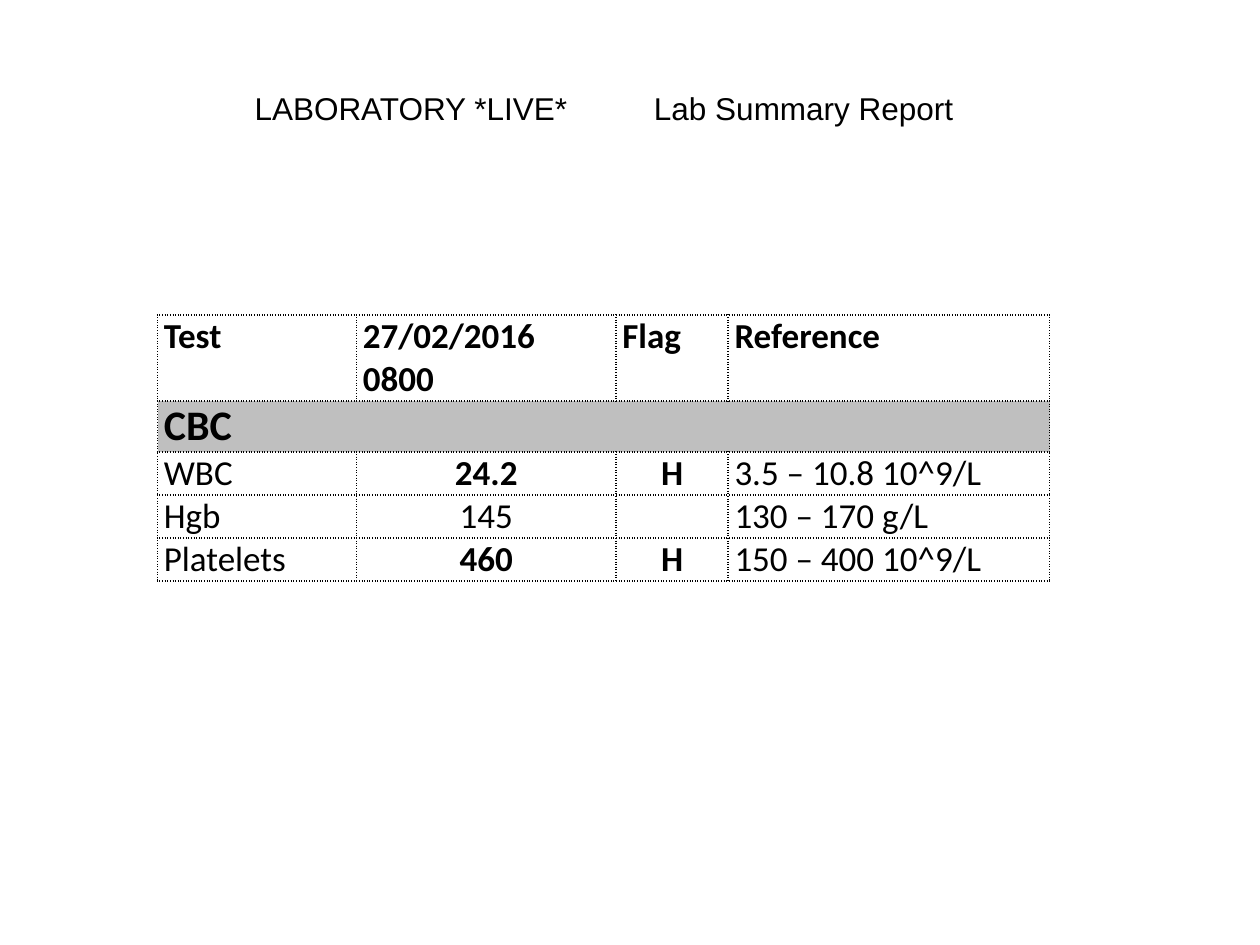
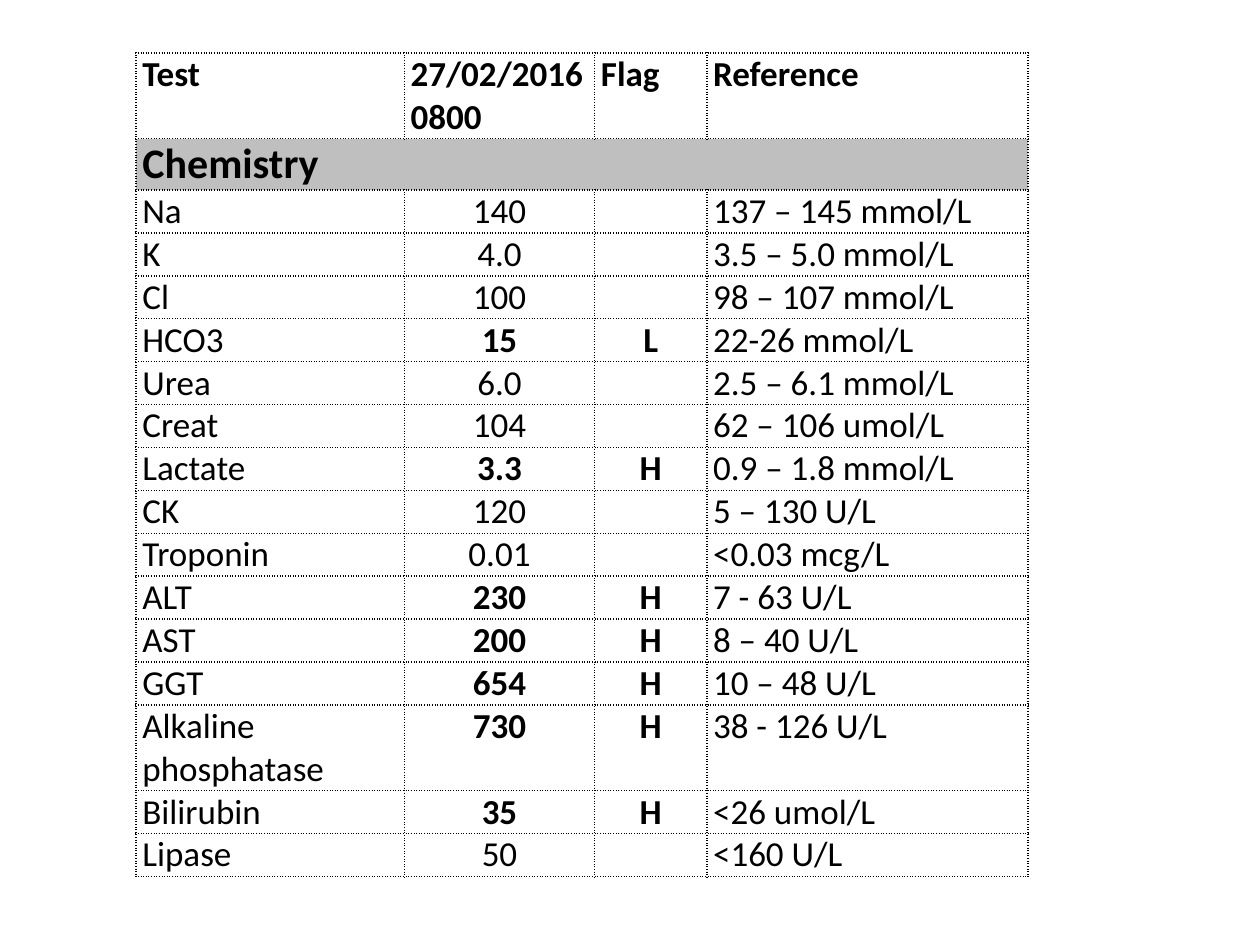
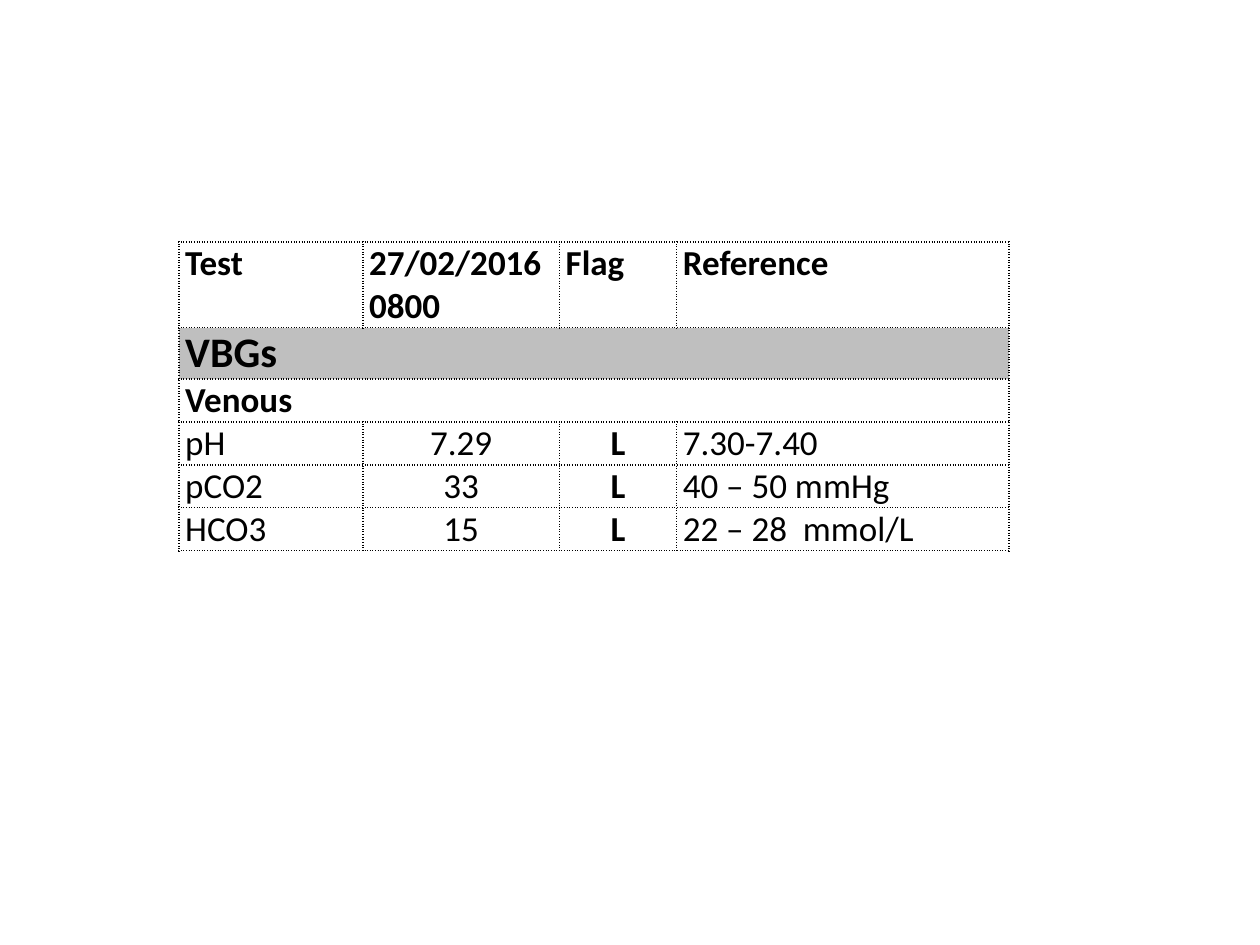
import lxml.etree
import pptx
import pptx.dml.color
import pptx.enum.text
import pptx.oxml.ns
import pptx.util

Inches = pptx.util.Inches
Pt = pptx.util.Pt
qn = pptx.oxml.ns.qn
ALIGN = pptx.enum.text.PP_ALIGN

BLACK = pptx.dml.color.RGBColor(0x00, 0x00, 0x00)
WHITE = pptx.dml.color.RGBColor(0xFF, 0xFF, 0xFF)
GREY = pptx.dml.color.RGBColor(0xBF, 0xBF, 0xBF)

TITLE_ONLY, BLANK = 5, 6
HEADER = ("Test", "27/02/2016 0800", "Flag", "Reference")
HEADER_HEIGHT, SECTION_HEIGHT, ROW_HEIGHT = 0.67, 0.4, 0.33

CBC = [
    ("WBC", "24.2", "H", "3.5 – 10.8 10^9/L"),
    ("Hgb", "145", "", "130 – 170 g/L"),
    ("Platelets", "460", "H", "150 – 400 10^9/L"),
]
CHEMISTRY = [
    ("Na", "140", "", "137 – 145 mmol/L"),
    ("K", "4.0", "", "3.5 – 5.0 mmol/L"),
    ("Cl", "100", "", "98 – 107 mmol/L"),
    ("HCO3", "15", "L", "22-26 mmol/L"),
    ("Urea", "6.0", "", "2.5 – 6.1 mmol/L"),
    ("Creat", "104", "", "62 – 106 umol/L"),
    ("Lactate", "3.3", "H", "0.9 – 1.8 mmol/L"),
    ("CK", "120", "", "5 – 130 U/L"),
    ("Troponin", "0.01", "", "<0.03 mcg/L"),
    ("ALT", "230", "H", "7 - 63 U/L"),
    ("AST", "200", "H", "8 – 40 U/L"),
    ("GGT", "654", "H", "10 – 48 U/L"),
    ("Alkaline phosphatase", "730", "H", "38 - 126 U/L"),
    ("Bilirubin", "35", "H", "<26 umol/L"),
    ("Lipase", "50", "", "<160 U/L"),
]
VENOUS_GASES = [
    ("Venous",),
    ("pH", "7.29", "L", "7.30-7.40"),
    ("pCO2", "33", "L", "40 – 50 mmHg"),
    ("HCO3", "15", "L", "22 – 28  mmol/L"),
]


def add_report_title(page, left, top, width, height):
    title = page.shapes.title
    title.left, title.top = Inches(left), Inches(top)
    title.width, title.height = Inches(width), Inches(height)
    frame = title.text_frame
    frame.text = "LABORATORY *LIVE*\tLab Summary Report"
    frame.word_wrap = True
    frame.auto_size = pptx.enum.text.MSO_AUTO_SIZE.NONE
    frame.vertical_anchor = pptx.enum.text.MSO_ANCHOR.TOP
    frame.margin_left = Inches(0.52)
    para = frame.paragraphs[0]
    para.alignment = ALIGN.LEFT
    tabs = lxml.etree.SubElement(para._p.get_or_add_pPr(), qn("a:tabLst"))
    lxml.etree.SubElement(tabs, qn("a:tab"), pos=str(Inches(3.17)), algn="l")
    for span in para.runs:
        set_font(span, "Arial", 18, False)


def set_font(span, name, size, bold):
    span.font.name = name
    span.font.size = Pt(size)
    span.font.bold = bold
    span.font.color.rgb = BLACK


def add_dotted_borders(cell):
    properties = cell._tc.get_or_add_tcPr()
    for side in ("L", "R", "T", "B"):
        line = lxml.etree.SubElement(properties, qn(f"a:ln{side}"), w=str(Pt(1)))
        fill = lxml.etree.SubElement(line, qn("a:solidFill"))
        lxml.etree.SubElement(fill, qn("a:srgbClr"), val=str(BLACK))
        lxml.etree.SubElement(line, qn("a:prstDash"), val="dot")


def style_cell(cell, fill):
    cell.margin_left = cell.margin_right = Inches(0.05)
    cell.margin_top = cell.margin_bottom = 0
    add_dotted_borders(cell)
    if fill is None:
        cell.fill.background()
    else:
        cell.fill.solid()
        cell.fill.fore_color.rgb = fill


def write_cell(cell, text, size=20, bold=False, align=ALIGN.LEFT):
    cell.text_frame.text = text
    para = cell.text_frame.paragraphs[0]
    para.alignment = align
    for span in para.runs:
        set_font(span, "Calibri", size, bold)


def add_lab_table(page, left, top, widths, section, results, bold_flagged=True):
    rows = [HEADER, (section,), *results]
    heights = [HEADER_HEIGHT, SECTION_HEIGHT] + [
        HEADER_HEIGHT if row[0] == "Alkaline phosphatase" else ROW_HEIGHT
        for row in results
    ]
    table = page.shapes.add_table(
        len(rows), len(widths), Inches(left), Inches(top),
        Inches(sum(widths)), Inches(sum(heights)),
    ).table
    table.first_row = table.horz_banding = False
    for column, width in zip(table.columns, widths):
        column.width = Inches(width)
    fills = [WHITE, GREY] + [None] * len(results)
    for index, (row, height, fill) in enumerate(zip(rows, heights, fills)):
        table.rows[index].height = Inches(height)
        cells = list(table.rows[index].cells)
        for cell in cells:
            style_cell(cell, fill)
        if len(row) == 1:
            cells[0].merge(cells[-1])
            write_cell(cells[0], row[0], 24 if index == 1 else 20, True)
        elif index == 0:
            for cell, text in zip(cells, row):
                write_cell(cell, text, bold=True)
        else:
            test, value, flag, reference = row
            write_cell(cells[0], test)
            write_cell(cells[1], value, bold=bool(flag) and bold_flagged, align=ALIGN.CENTER)
            write_cell(cells[2], flag, bold=True, align=ALIGN.CENTER)
            write_cell(cells[3], reference)


def main():
    deck = pptx.Presentation()
    deck.slide_width, deck.slide_height = Inches(10), Inches(7.5)
    cbc_page, chemistry_page, gases_page = [
        deck.slides.add_slide(deck.slide_layouts[layout])
        for layout in (TITLE_ONLY, BLANK, BLANK)
    ]
    add_report_title(cbc_page, 1.5, 0.66, 6.58, 0.67)
    add_lab_table(cbc_page, 1.25, 2.5, (1.58, 2.06, 0.89, 2.55), "CBC", CBC)
    add_lab_table(chemistry_page, 1.08, 0.42, (2.13, 1.51, 0.89, 2.55), "Chemistry", CHEMISTRY)
    add_lab_table(gases_page, 1.42, 1.92, (1.46, 1.56, 0.93, 2.64), "VBGs", VENOUS_GASES,
                  bold_flagged=False)
    deck.save("out.pptx")


if __name__ == "__main__":
    main()
